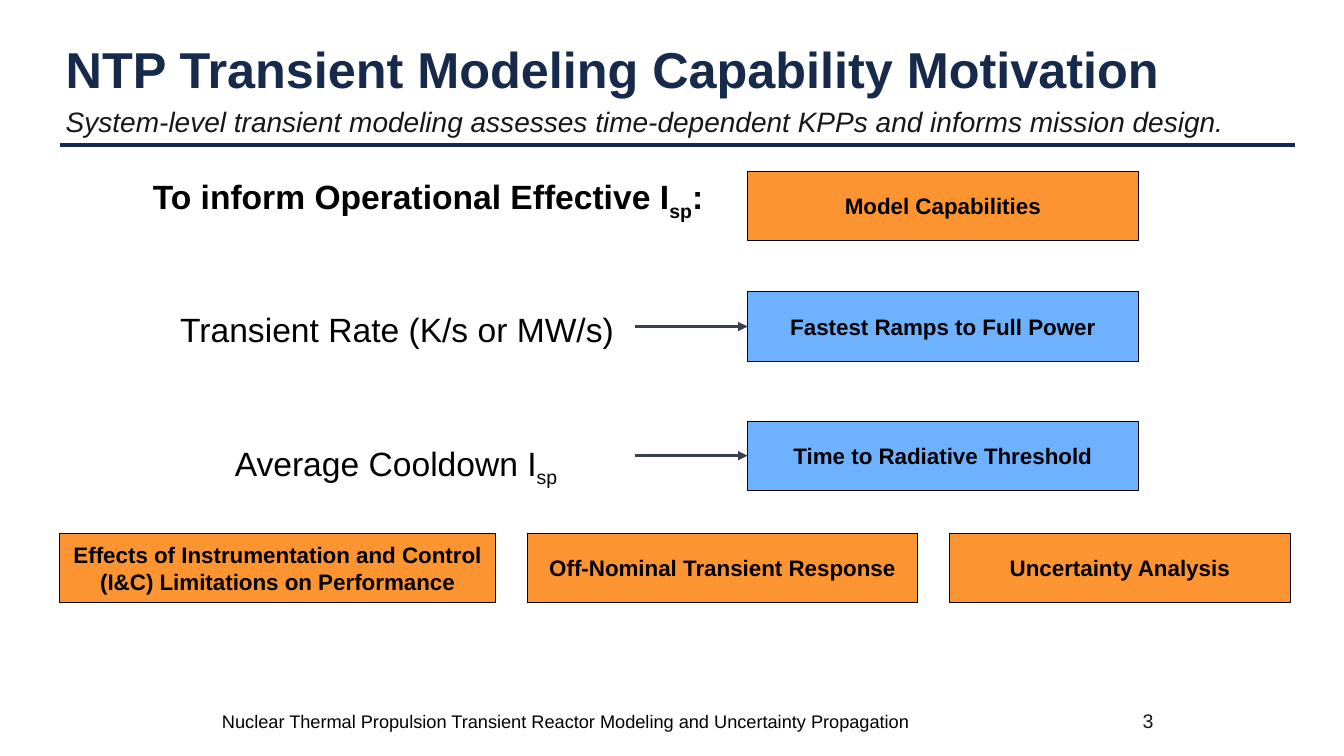
"""Build the slide on the motivation for NTP transient modeling."""
from pptx import Presentation
from pptx.dml.color import RGBColor
from pptx.enum.shapes import MSO_CONNECTOR as CONNECTOR, MSO_SHAPE as SHAPE
from pptx.enum.text import MSO_ANCHOR as ANCHOR, MSO_AUTO_SIZE as AUTO_SIZE, PP_ALIGN as ALIGN
from pptx.oxml.ns import qn
from pptx.util import Emu, Pt
from lxml.etree import SubElement

PX = 9525
NAVY = RGBColor(0x18, 0x27, 0x52)
TITLE_NAVY = RGBColor(0x18, 0x2A, 0x4B)
INK = RGBColor(0x18, 0x17, 0x17)
BLACK = RGBColor(0x00, 0x00, 0x00)
SLATE = RGBColor(0x3A, 0x41, 0x4A)
BLUE = RGBColor(0x6D, 0xB1, 0xFF)
ORANGE = RGBColor(0xFC, 0x94, 0x32)

BOX_LEFT, BOX_WIDTH, BOX_HEIGHT = 712, 372, 66
BOTTOM_LEFT, BOTTOM_TOP, BOTTOM_GAP = 57, 508, 30
ARROW_LEFT = 605

METRICS = [
    (("To inform Operational Effective I", "sp", ":"), 0, True),
    (("Transient Rate (K/s or MW/s)",), 26, False),
    (("Average Cooldown I", "sp"), 78, False),
]
CAPABILITIES = [
    ("Fastest Ramps to Full Power", 278),
    ("Time to Radiative Threshold", 401),
]
BOTTOM_TOPICS = [
    ("Effects of Instrumentation and Control (I&C) Limitations on Performance", 415),
    ("Off-Nominal Transient Response", 372),
    ("Uncertainty Analysis", 325),
]


def px(*lengths):
    """Turn lengths in px into EMU."""
    return [Emu(length * PX) for length in lengths]


def style(font, size, color, bold=False, italic=False):
    """Set the look of a font."""
    font.name, font.size = "Arial", Pt(size)
    font.bold, font.italic = bold, italic
    font.color.rgb = color


def place(placeholder, left, top, width, height):
    """Move a placeholder and return its text frame."""
    placeholder.left, placeholder.top, placeholder.width, placeholder.height = px(
        left, top, width, height)
    frame = placeholder.text_frame
    frame.auto_size = AUTO_SIZE.NONE
    return frame


def plain_paragraph(paragraph, indent=0):
    """Remove the bullet of a paragraph and set its left indent."""
    properties = paragraph._p.get_or_add_pPr()
    properties.set("marL", str(indent * PX))
    properties.set("indent", "0")
    SubElement(properties, qn("a:buNone"))
    paragraph.alignment = ALIGN.LEFT
    paragraph.space_before = Pt(0)


def add_heading(frame, text, size, color, spacing, **look):
    """Fill a placeholder with a single line."""
    frame.text = text
    heading = frame.paragraphs[0]
    plain_paragraph(heading)
    heading.line_spacing = spacing
    style(heading.runs[0].font, size, color, **look)


def add_metrics(frame):
    """List the metrics, lowering every second run as a subscript."""
    for row, (parts, indent, bold) in enumerate(METRICS):
        metric = frame.add_paragraph() if row else frame.paragraphs[0]
        plain_paragraph(metric, indent)
        metric.line_spacing = 0.95
        if row:
            metric.space_before = Pt(66)
        for position, part in enumerate(parts):
            run = metric.add_run()
            run.text = part
            style(run.font, 24, BLACK, bold)
            if position % 2:
                run._r.get_or_add_rPr().set("baseline", "-25000")


def add_box(slide, text, left, top, width, fill):
    """Draw a labelled rectangle."""
    box = slide.shapes.add_shape(SHAPE.RECTANGLE, *px(left, top, width, BOX_HEIGHT))
    box.shadow.inherit = False
    box.fill.solid()
    box.fill.fore_color.rgb = fill
    box.line.color.rgb = BLACK
    box.line.width = Pt(0.75)
    frame = box.text_frame
    frame.word_wrap = True
    frame.vertical_anchor = ANCHOR.MIDDLE
    frame.text = text
    label = frame.paragraphs[0]
    label.alignment = ALIGN.CENTER
    style(label.runs[0].font, 16, BLACK, bold=True)
    return box


def add_line(slide, left, right, y, color, weight):
    """Draw a level line without a shadow."""
    line = slide.shapes.add_connector(CONNECTOR.STRAIGHT, *px(left, y, right, y))
    line.line.color.rgb = color
    line.line.width = Pt(weight)
    SubElement(line._element.spPr, qn("a:effectLst"))
    return line


def add_arrow(slide, box, y):
    """Draw an arrow that ends at the left side of a box."""
    arrow = add_line(slide, ARROW_LEFT, BOX_LEFT, y, SLATE, 2.25)
    arrow.end_connect(box, 1)
    SubElement(arrow.line._get_or_add_ln(), qn("a:tailEnd"), type="triangle")


def add_footer(slide, text, left, top, width, size, color, align):
    """Write one text of the footer."""
    frame = slide.shapes.add_textbox(*px(left, top, width, 38)).text_frame
    frame.word_wrap = True
    frame.vertical_anchor = ANCHOR.MIDDLE
    frame.text = text
    footer = frame.paragraphs[0]
    footer.alignment = align
    style(footer.runs[0].font, size, color)


def main():
    """Build and save the slide."""
    deck = Presentation()
    deck.slide_width, deck.slide_height = px(1280, 720)
    slide = deck.slides.add_slide(deck.slide_layouts[3])
    title, metrics, subtitle = slide.placeholders

    title_frame = place(title, 53, 38, 1177, 60)
    title_frame.vertical_anchor = ANCHOR.MIDDLE
    add_heading(title_frame, "NTP Transient Modeling Capability Motivation",
                36, TITLE_NAVY, 0.95, bold=True)
    add_heading(place(subtitle, 53, 98, 1177, 37),
                "System-level transient modeling assesses time-dependent KPPs "
                "and informs mission design.", 20, INK, 0.9, italic=True)
    add_line(slide, 57, 1233, 138, NAVY, 3)
    add_metrics(place(metrics, 136, 163, 1036, 499))

    add_box(slide, "Model Capabilities", BOX_LEFT, 163, BOX_WIDTH, ORANGE)
    for text, top in CAPABILITIES:
        capability = add_box(slide, text, BOX_LEFT, top, BOX_WIDTH, BLUE)
        add_arrow(slide, capability, top + BOX_HEIGHT // 2)

    left = BOTTOM_LEFT
    for text, width in BOTTOM_TOPICS:
        add_box(slide, text, left, BOTTOM_TOP, width, ORANGE)
        left += width + BOTTOM_GAP

    add_footer(slide, "Nuclear Thermal Propulsion Transient Reactor Modeling "
               "and Uncertainty Propagation", 202, 668, 812, 13, BLACK, ALIGN.LEFT)
    add_footer(slide, "3", 820, 667, 288, 14, INK, ALIGN.RIGHT)
    deck.save("out.pptx")


if __name__ == "__main__":
    main()
